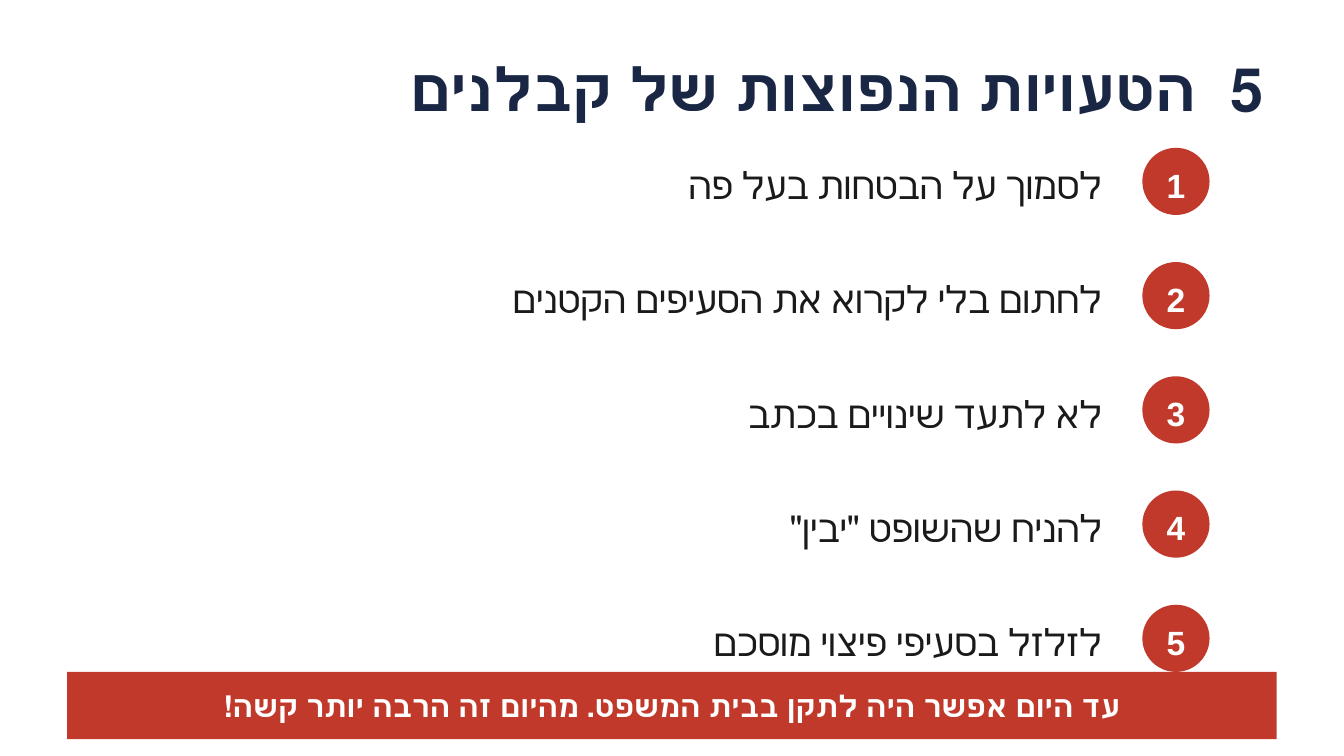
import pptx
import pptx.dml.color
import pptx.enum.shapes
import pptx.enum.text
import pptx.util

COLOURS = {"navy": "1A2744", "red": "C0392B", "ink": "1A1A1A", "white": "FFFFFF"}
CELL = 0.5
MARGIN, FULL_WIDTH = 1, 18
FIRST_ROW, ROW_STEP = 2.2, 1.7
BADGE_COLUMN = 17
TEXT_DROP = 0.1
ALIGN = pptx.enum.text.PP_ALIGN
SHAPE = pptx.enum.shapes.MSO_SHAPE

TITLE = {"size": pptx.util.Pt(32), "bold": True}
NUMBER = {"size": pptx.util.Pt(18), "bold": True}
MISTAKE = {"size": pptx.util.Pt(20), "bold": False}
WARNING = {"size": pptx.util.Pt(16), "bold": True}

MISTAKES = [
    "לסמוך על הבטחות בעל פה",
    "לחתום בלי לקרוא את הסעיפים הקטנים",
    "לא לתעד שינויים בכתב",
    'להניח שהשופט "יבין"',
    "לזלזל בסעיפי פיצוי מוסכם",
]


def grid(*cells):
    """Turn grid cells into lengths."""
    return [pptx.util.Inches(round(cell * CELL, 2)) for cell in cells]


def colour(name):
    """Look up a named colour."""
    return pptx.dml.color.RGBColor.from_string(COLOURS[name])


def add_block(page, kind, *cells):
    """Draw a flat red shape."""
    block = page.shapes.add_shape(kind, *grid(*cells))
    block.shadow.inherit = False
    block.fill.solid()
    block.fill.fore_color.rgb = colour("red")
    block.line.fill.background()


def add_label(page, text, cells, style, ink, align, rtl=True):
    """Write one vertically centred line of text."""
    box = page.shapes.add_textbox(*grid(*cells))
    frame = box.text_frame
    frame.word_wrap = True
    frame.vertical_anchor = pptx.enum.text.MSO_ANCHOR.MIDDLE
    para = frame.paragraphs[0]
    para.alignment = align
    if rtl:
        para._p.get_or_add_pPr().set("rtl", "1")
    span = para.add_run()
    span.text = text
    for name, value in {"name": "Arial", **style}.items():
        setattr(span.font, name, value)
    span.font.color.rgb = colour(ink)


def add_mistake(page, number, text):
    """Place a numbered badge with its mistake beside it."""
    row = FIRST_ROW + (number - 1) * ROW_STEP
    text_row = row + TEXT_DROP
    add_block(page, SHAPE.OVAL, BADGE_COLUMN, row, 1, 1)
    add_label(page, str(number), (BADGE_COLUMN, text_row, 1, 0.9),
              NUMBER, "white", ALIGN.CENTER, rtl=False)
    add_label(page, text, (MARGIN, text_row, 15.6, 0.9),
              MISTAKE, "ink", ALIGN.RIGHT)


def main():
    """Build and save the deck."""
    deck = pptx.Presentation()
    deck.slide_width = pptx.util.Inches(10)
    deck.slide_height = deck.slide_width * 9 // 16
    page = deck.slides.add_slide(deck.slide_layouts[6])
    page.background.fill.solid()
    page.background.fill.fore_color.rgb = colour("white")
    add_label(page, "5  הטעויות הנפוצות של קבלנים", (MARGIN, 0.6, FULL_WIDTH, 1.4),
              TITLE, "navy", ALIGN.RIGHT)
    for number, text in enumerate(MISTAKES, 1):
        add_mistake(page, number, text)
    add_block(page, SHAPE.RECTANGLE, MARGIN, 10, FULL_WIDTH, 1)
    add_label(page, "עד היום אפשר היה לתקן בבית המשפט. מהיום זה הרבה יותר קשה!",
              (MARGIN, 10 + TEXT_DROP, FULL_WIDTH, 0.8), WARNING, "white", ALIGN.CENTER)
    deck.save("out.pptx")


if __name__ == "__main__":
    main()
